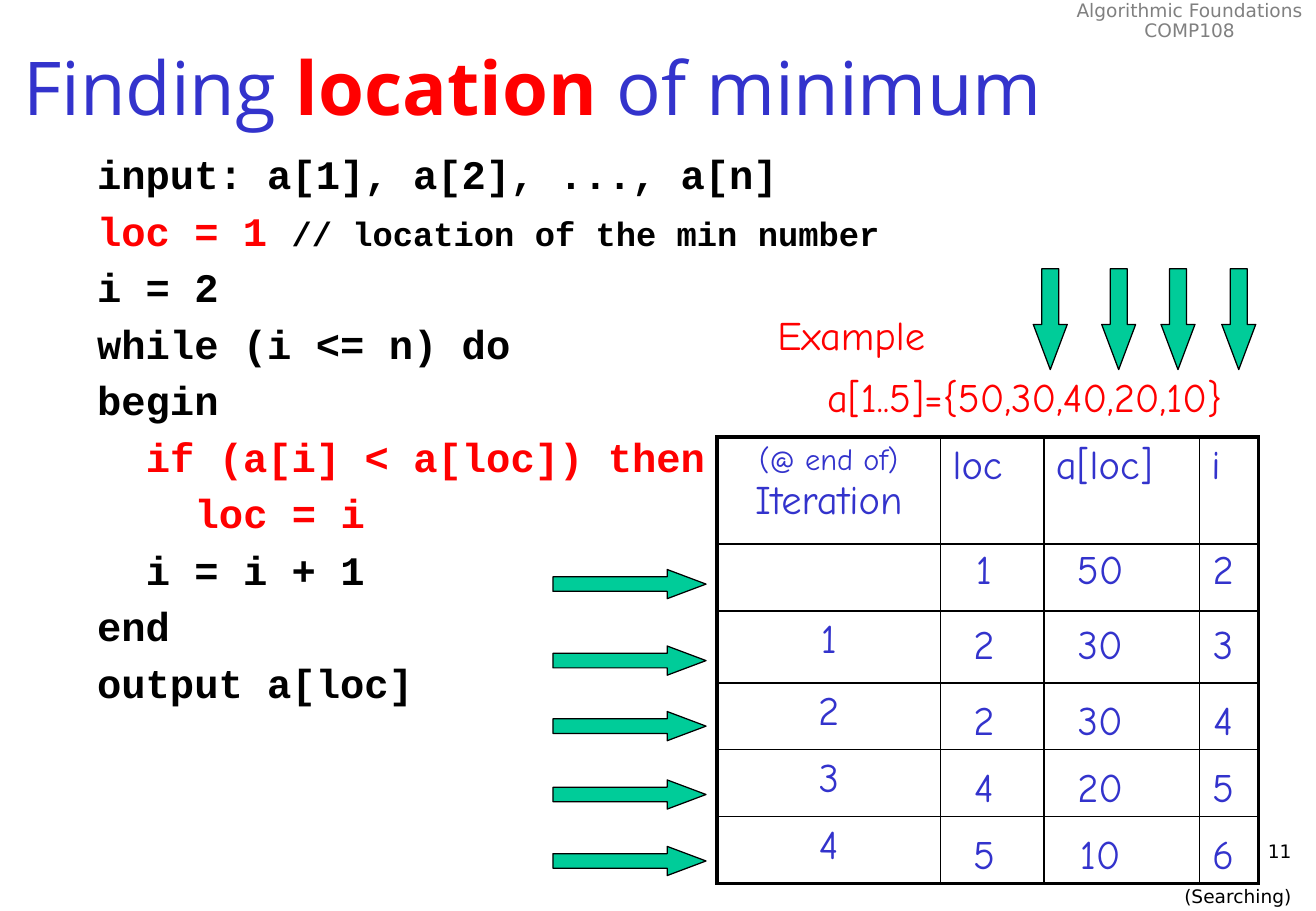
from lxml.etree import SubElement
from pptx import Presentation
from pptx.dml.color import RGBColor
from pptx.enum.shapes import MSO_SHAPE
from pptx.enum.text import MSO_ANCHOR, MSO_AUTO_SIZE, PP_ALIGN
from pptx.oxml.ns import qn
from pptx.util import Cm, Pt

COLORS = {
    "blue": "3333CC",
    "red": "FF0000",
    "black": "000000",
    "grey": "808080",
    "green": "00CC99",
    "white": "FFFFFF",
}
HAND, CODE, PLAIN, HEADING = "Comic Neue", "Courier New", "DejaVu Sans", "Open Sans"

ALGORITHM = [
    (0, "black", "input: a[1], a[2], ..., a[n]"),
    (0, "red", "loc = 1 "),
    (0, "black", "i = 2"),
    (0, "black", "while (i <= n) do"),
    (0, "black", "begin"),
    (1, "red", "if (a[i] < a[loc]) then"),
    (2, "red", "loc = i"),
    (1, "black", "i = i + 1"),
    (0, "black", "end"),
    (0, "black", "output a[loc]"),
]
REMARKS = {1: "// location of the min number"}
INDENT_STEP = Cm(1.02)

COLUMN_WIDTHS = [4.67, 2.16, 3.25, 1.24]
ROW_HEIGHTS = [2.24, 1.4, 1.5, 1.4, 1.4, 1.4]
HEADINGS = ["loc", "a[loc]", "i"]
TRACE = [
    (11.25, 11.91, ("1", "50", "2")),
    (12.83, 13.51, ("2", "30", "3")),
    (14.4, 14.88, ("2", "30", "4")),
    (15.8, 16.31, ("4", "20", "5")),
    (17.22, 17.7, ("5", "10", "6")),
]
TRACE_CENTERS = [20.57, 23.0, 25.57]
POINTER_LEFTS = [20.9, 22.33, 23.57, 24.84]


def rgb(color):
    return RGBColor.from_string(COLORS[color])


def style(font, name, size, color=None, bold=None):
    font.name, font.size, font.bold = name, Pt(size), bold
    if color:
        font.color.rgb = rgb(color)


def add_text(slide, box, lines, name, size, color, align=PP_ALIGN.LEFT, wrap=True):
    frame = slide.shapes.add_textbox(*map(Cm, box)).text_frame
    frame.word_wrap = wrap
    frame.text = "\n".join(lines)
    for paragraph in frame.paragraphs:
        paragraph.alignment = align
        style(paragraph.font, name, size, color)
    return frame


def add_colored_run(paragraph, text, color):
    run = paragraph.add_run()
    run.text = text
    run.font.color.rgb = rgb(color)
    return run


def add_title(slide):
    title = slide.shapes.title
    title.left, title.top, title.width, title.height = map(Cm, (0.23, 0.2, 27.28, 3.18))
    frame = title.text_frame
    frame.auto_size = MSO_AUTO_SIZE.NONE
    frame.vertical_anchor = MSO_ANCHOR.MIDDLE
    heading = frame.paragraphs[0]
    heading.alignment = PP_ALIGN.LEFT
    style(heading.font, HEADING, 44)
    add_colored_run(heading, "Finding ", "blue")
    add_colored_run(heading, "location", "red").font.bold = True
    add_colored_run(heading, " of minimum", "blue")


def add_algorithm(slide):
    frame = slide.shapes.add_textbox(*map(Cm, (1.78, 2.74, 19.48, 15.24))).text_frame
    frame.word_wrap = True
    frame.margin_top = Cm(0.28)
    for number, (depth, color, code) in enumerate(ALGORITHM):
        line = frame.add_paragraph() if number else frame.paragraphs[0]
        line.line_spacing, line.space_before = 1.1, Pt(1.8)
        style(line.font, CODE, 24, bold=True)
        line._p.get_or_add_pPr().set("marL", str(depth * INDENT_STEP))
        add_colored_run(line, code, color)
        if number in REMARKS:
            add_colored_run(line, REMARKS[number], "black").font.size = Pt(20)


def add_borders(cell, widths):
    properties = cell._tc.get_or_add_tcPr()
    for position, (side, width) in enumerate(widths.items()):
        border = SubElement(properties, qn(f"a:{side}"), w=str(Pt(width)))
        fill = SubElement(border, qn("a:solidFill"))
        SubElement(fill, qn("a:srgbClr"), val=COLORS["black"])
        properties.remove(border)
        properties.insert(position, border)


def add_trace_table(slide):
    last_row, last_column = len(ROW_HEIGHTS) - 1, len(COLUMN_WIDTHS) - 1
    size = Cm(sum(COLUMN_WIDTHS)), Cm(sum(ROW_HEIGHTS))
    table = slide.shapes.add_table(
        last_row + 1, last_column + 1, Cm(14.99), Cm(9.14), *size).table
    for column, width in zip(table.columns, COLUMN_WIDTHS):
        column.width = Cm(width)
    for row, height in zip(table.rows, ROW_HEIGHTS):
        row.height = Cm(height)

    for column, heading in enumerate(HEADINGS, 1):
        table.cell(0, column).text = heading
    for iteration in range(1, 5):
        table.cell(iteration + 1, 0).text = str(iteration)
    iteration_heading = table.cell(0, 0).text_frame.paragraphs[0]
    moment = iteration_heading.add_run()
    moment.text = "(@ end of) "
    moment.font.size = Pt(18)
    iteration_heading.add_run().text = "Iteration"

    for r in range(last_row + 1):
        for c in range(last_column + 1):
            cell = table.cell(r, c)
            cell.fill.solid()
            cell.fill.fore_color.rgb = rgb("white")
            outer = {"lnL": c == 0, "lnR": c == last_column,
                     "lnT": r == 0, "lnB": r == last_row}
            add_borders(cell, {side: 2.25 if edge else 1 for side, edge in outer.items()})
            entry = cell.text_frame.paragraphs[0]
            entry.alignment = PP_ALIGN.LEFT if c else PP_ALIGN.CENTER
            style(entry.font, HAND, 24, "blue", False)


def add_arrow(slide, left, top, width, height, rotation=0):
    arrow = slide.shapes.add_shape(
        MSO_SHAPE.RIGHT_ARROW, Cm(left), Cm(top), Cm(width), Cm(height))
    arrow.adjustments[0], arrow.adjustments[1] = 0.5, 1.33
    arrow.rotation = rotation
    arrow.shadow.inherit = False
    arrow.fill.solid()
    arrow.fill.fore_color.rgb = rgb("green")
    arrow.line.color.rgb = rgb("black")
    arrow.line.width = Pt(0.75)


def add_trace(slide):
    for value_top, arrow_top, values in TRACE:
        add_arrow(slide, 11.56, arrow_top, 3.2, 0.61)
        for center, value in zip(TRACE_CENTERS, values):
            add_text(slide, (center - 0.78, value_top, 1.56, 1.3), [value],
                     HAND, 24, "blue", PP_ALIGN.CENTER, wrap=False)
    for left in POINTER_LEFTS:
        add_arrow(slide, left, 6.32, 2.11, 0.71, rotation=90)


def main():
    presentation = Presentation()
    presentation.slide_width, presentation.slide_height = Cm(27.51), Cm(19.05)
    slide = presentation.slides.add_slide(presentation.slide_layouts[5])

    course = add_text(slide, (22.23, -0.1, 5.28, 1.09), ["Algorithmic Foundations", "COMP108"],
                      PLAIN, 11, "grey", PP_ALIGN.CENTER, wrap=False)
    for line in course.paragraphs:
        line.line_spacing = 0.9
    footer = add_text(slide, (21.51, 17.45, 5.74, 1.27), ["11", "(Searching)"],
                      PLAIN, 11, "black", PP_ALIGN.RIGHT)
    footer.paragraphs[1].space_before = Pt(13)

    add_title(slide)
    add_algorithm(slide)
    add_trace_table(slide)
    add_text(slide, (16, 6.35, 3.81, 1.3), ["Example"], HAND, 24, "red", wrap=False)
    add_text(slide, (17.04, 7.65, 10.4, 1.3), ["a[1..5]={50,30,40,20,10}"], HAND, 24, "red")
    add_trace(slide)
    presentation.save("out.pptx")


if __name__ == "__main__":
    main()
